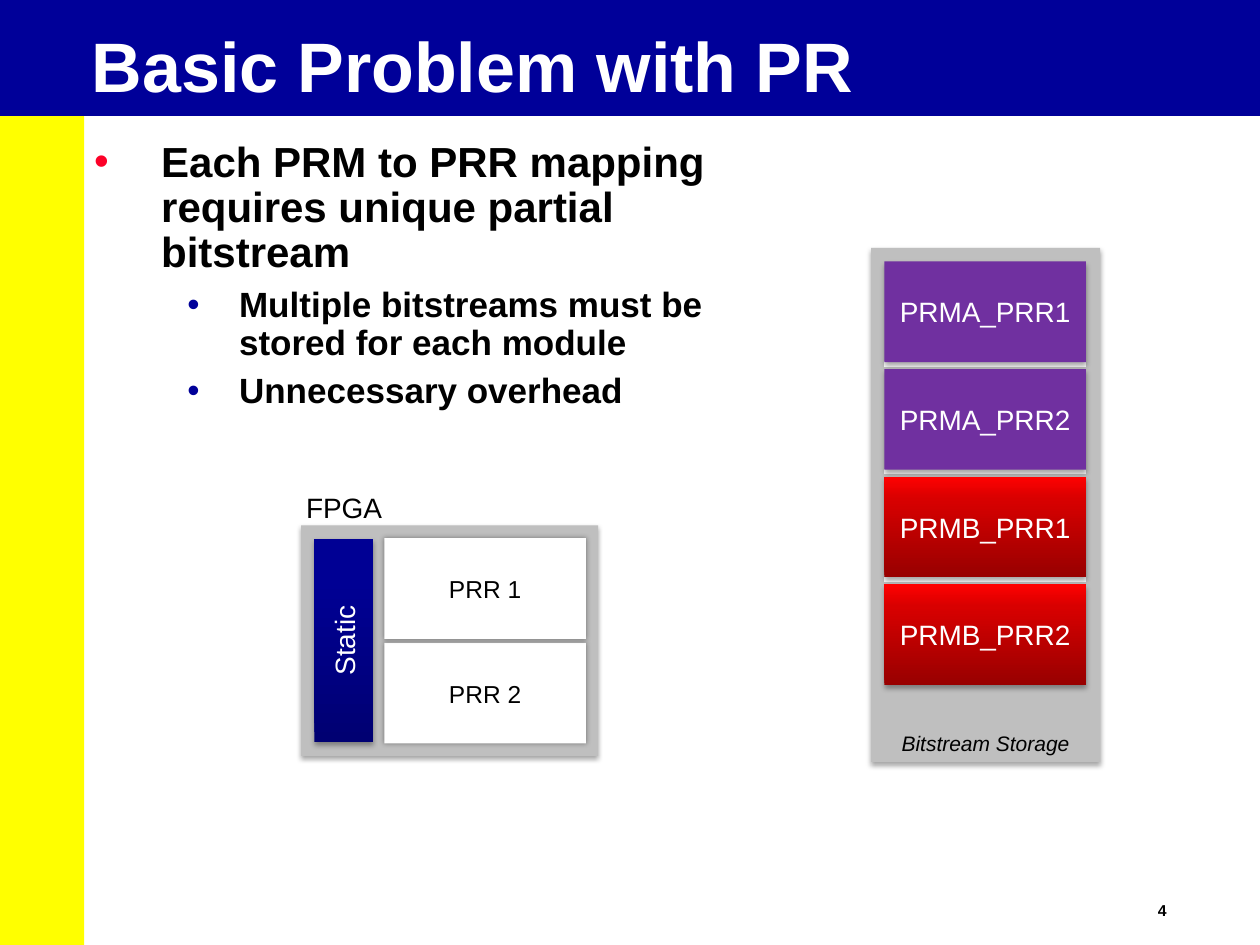
"""Build the slide on the basic problem with partial reconfiguration."""
from lxml import etree
from pptx import Presentation
from pptx.dml.color import RGBColor
from pptx.enum.shapes import MSO_CONNECTOR, MSO_SHAPE
from pptx.enum.text import MSO_ANCHOR, MSO_AUTO_SIZE, PP_ALIGN
from pptx.oxml.ns import qn
from pptx.util import Cm, Pt

RECT = MSO_SHAPE.RECTANGLE
LINE = MSO_CONNECTOR.STRAIGHT
TOP, MID, LOW = MSO_ANCHOR.TOP, MSO_ANCHOR.MIDDLE, MSO_ANCHOR.BOTTOM
LEFT, MIDST = PP_ALIGN.LEFT, PP_ALIGN.CENTER
FIXED = MSO_AUTO_SIZE.NONE

NAVY, WHITE, BLACK, GREY = "000099", "FFFFFF", "000000", "BFBFBF"
YELLOW, PURPLE, ROSE = "FFFF00", "7030A0", "FC0128"
BLUES = [(0, "000072"), (80, "000094"), (100, "000095")]
REDS = [(0, "980000"), (78, "D80000"), (100, "FF0101")]
WIDE, TIGHT, BODY, SLIM = (0.25, 0.13), (0.15, 0.05), (0.2, 0.1), (0, 0.13)


def tint(code):
    return RGBColor.from_string(code)


def node(host, tag, **attrs):
    return etree.SubElement(host, qn(tag), **attrs)


class Deck:
    def __init__(self):
        self.file = Presentation()
        self.file.slide_width, self.file.slide_height = Cm(25.4), Cm(19.05)
        self.slide = self.file.slides.add_slide(self.file.slide_layouts[6])
        self.pool = self.slide.shapes
        self.font = "Arial"

    def group(self):
        self.pool = self.slide.shapes.add_group_shape().shapes

    def ungroup(self):
        self.pool = self.slide.shapes

    def box(self, x, y, w, h, fill, drop=None):
        shape = self.pool.add_shape(RECT, Cm(x), Cm(y), Cm(w), Cm(h))
        if isinstance(fill, str):
            shape.fill.solid()
            shape.fill.fore_color.rgb = tint(fill)
        else:
            self.blend(shape, fill)
        shape.line.fill.background()
        shape.shadow.inherit = False
        if drop is not None:
            self.shade(shape, drop)
        return shape

    def blend(self, shape, stops):
        shape.fill.gradient()
        shape.fill.gradient_angle = 90
        chain = shape._element.spPr.find(qn("a:gradFill")).find(qn("a:gsLst"))
        for old in list(chain):
            chain.remove(old)
        for place, code in stops:
            stop = node(chain, "a:gs", pos=str(place * 1000))
            node(stop, "a:srgbClr", val=code)

    def shade(self, shape, drop):
        glow = shape._element.spPr.find(qn("a:effectLst"))
        angle = "5400000" if drop else "0"
        cast = node(glow, "a:outerShdw", blurRad=str(Pt(3.1)),
                    dist=str(Pt(drop)), dir=angle, rotWithShape="0")
        node(node(cast, "a:srgbClr", val=BLACK), "a:alpha", val="35000")

    def area(self, x, y, w, h):
        return self.pool.add_textbox(Cm(x), Cm(y), Cm(w), Cm(h))

    def frame(self, shape, pad=WIDE, seat=TOP, wrap=True):
        frame = shape.text_frame
        frame.auto_size = FIXED
        frame.word_wrap = wrap
        frame.vertical_anchor = seat
        frame.margin_left = frame.margin_right = Cm(pad[0])
        frame.margin_top = frame.margin_bottom = Cm(pad[1])
        return frame

    def run(self, par, text, size, code=BLACK, bold=False, slant=False):
        run = par.add_run()
        run.text = text
        font = run.font
        font.name, font.size = self.font, Pt(size)
        font.bold, font.italic = bold, slant
        font.color.rgb = tint(code)

    def label(self, shape, text, size, code=BLACK, pad=WIDE, seat=MID,
              side=MIDST, wrap=True, space=None, bold=False, slant=False):
        par = self.frame(shape, pad, seat, wrap).paragraphs[0]
        par.alignment = side
        if space:
            par.line_spacing = space
        self.run(par, text, size, code, bold, slant)

    def points(self, shape, items):
        frame = self.frame(shape, BODY)
        for spot, (text, level) in enumerate(items):
            par = frame.add_paragraph() if spot else frame.paragraphs[0]
            size, edge, hang, code = ((20, 2.92, 1.04, NAVY) if level
                                      else (24, 1.35, 1.35, ROSE))
            par.level, par.alignment = level, LEFT
            par.line_spacing, par.space_before = 0.9, Pt(size * 0.3)
            props = par._p.get_or_add_pPr()
            props.set("marL", str(Cm(edge)))
            props.set("indent", str(-Cm(hang)))
            node(node(props, "a:buClr"), "a:srgbClr", val=code)
            node(props, "a:buFont", typeface=self.font)
            node(props, "a:buChar", char="•")
            self.run(par, text, size, bold=True)

    def rule(self, x, y, w):
        line = self.pool.add_connector(LINE, Cm(x), Cm(y), Cm(x + w), Cm(y))
        line.line.color.rgb = tint(WHITE)
        line.line.width = Pt(3)
        node(line._element.spPr, "a:effectLst")


def main():
    deck = Deck()
    deck.box(0, 0, 25.4, 2.34, NAVY)
    deck.label(deck.area(23.19, 18.14, 0.94, 0.48), "4", 9, pad=TIGHT,
               seat=TOP, side=LEFT, wrap=False, space=0.97, bold=True)
    deck.box(0, 2.34, 1.7, 16.71, YELLOW)
    deck.label(deck.box(1.7, 0.64, 22.23, 1.6, NAVY), "Basic Problem with PR",
               40, WHITE, TIGHT, TOP, LEFT, space=0.87, bold=True)
    deck.points(deck.area(1.7, 2.74, 12.73, 6.22), [
        ("Each PRM to PRR mapping requires unique partial bitstream", 0),
        ("Multiple bitstreams must be stored for each module", 1),
        ("Unnecessary overhead", 1),
    ])
    deck.label(deck.box(17.56, 5, 4.62, 10.36, GREY, 1.8),
               "Bitstream Storage", 12, seat=LOW, wrap=False, slant=True)

    wide, high = 4.06, 2.03
    deck.group()
    deck.box(6.07, 10.59, 5.99, 4.65, GREY, 1.8)
    fixed = deck.box(6.34, 10.87, 1.19, 4.09, BLUES, 1.8)
    deck.label(fixed, "Static", 16, WHITE)
    fixed.text_frame._txBody.bodyPr.set("vert", "vert270")
    for text, y in (("PRR 2", 12.96), ("PRR 1", 10.85)):
        deck.label(deck.box(7.75, y, wide, high, WHITE, 0), text, 14)
    deck.ungroup()

    left, step = 17.83, 2.17
    for row in range(3):
        deck.rule(left, 7.34 + row * step, wide)
    parts = [("PRMA_PRR1", PURPLE, SLIM), ("PRMA_PRR2", PURPLE, SLIM),
             ("PRMB_PRR1", REDS, WIDE), ("PRMB_PRR2", REDS, WIDE)]
    for row, (text, fill, pad) in enumerate(parts):
        part = deck.box(left, 5.27 + row * step, wide, high, fill, 1.8)
        deck.label(part, text, 16, WHITE, pad)
    deck.label(deck.area(5.92, 9.75, 2.29, 0.94), "FPGA", 16,
               seat=TOP, side=LEFT)
    deck.file.save("out.pptx")


if __name__ == "__main__":
    main()
